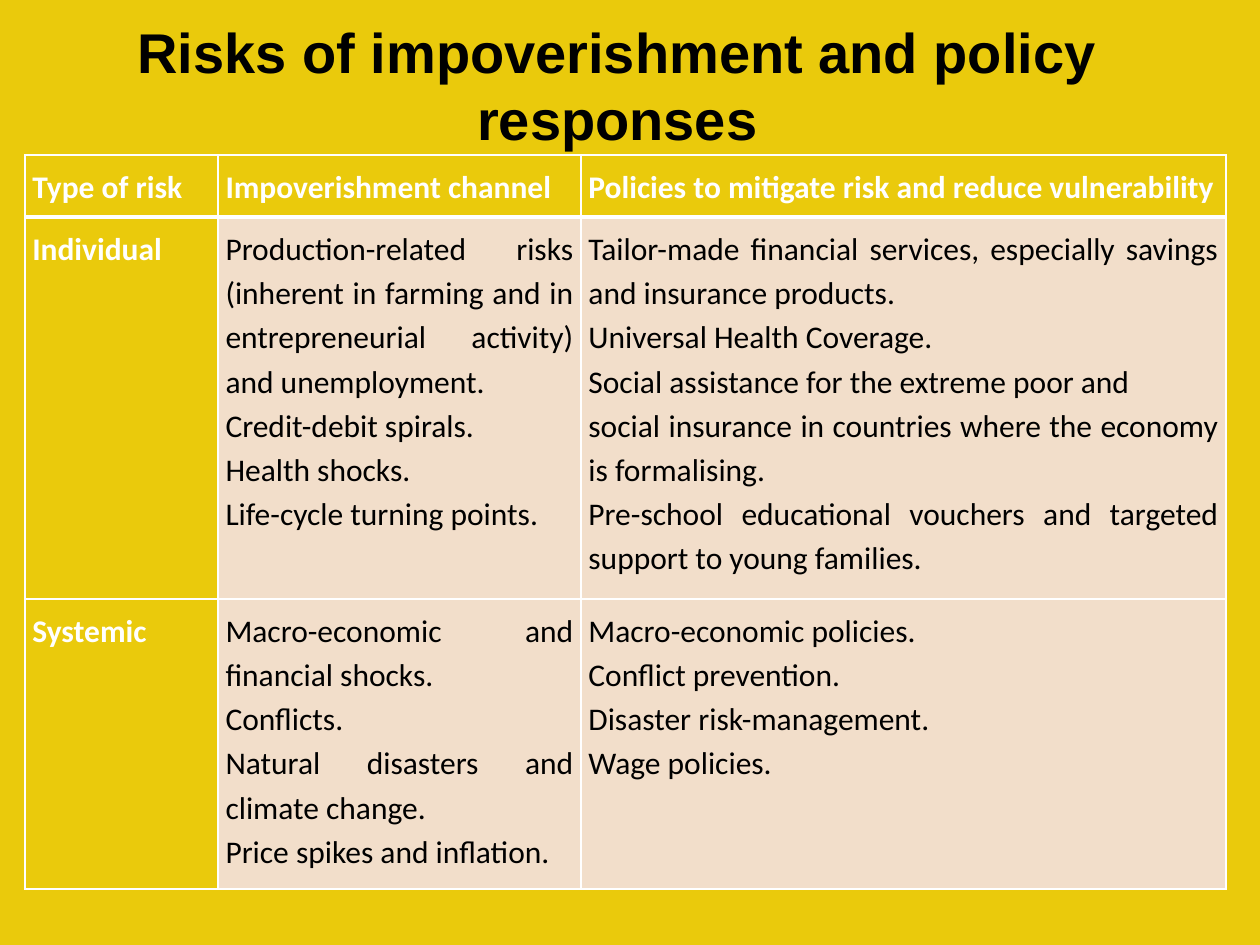
from dataclasses import dataclass

from lxml.etree import SubElement
from pptx import Presentation
from pptx.dml.color import RGBColor as RGB
from pptx.enum.text import MSO_ANCHOR as Anchor, PP_ALIGN as Align
from pptx.oxml.ns import qn
from pptx.util import Pt


@dataclass(frozen=True)
class Theme:
    gold: RGB = RGB(0xEA, 0xCA, 0x0C)
    sand: RGB = RGB(0xF2, 0xDE, 0xCA)
    white: RGB = RGB(0xFF, 0xFF, 0xFF)
    black: RGB = RGB(0, 0, 0)
    title_font: str = "Arial"
    table_font: str = "Calibri"
    title_size: int = 32
    table_size: int = 18


THEME = Theme()
TITLE = "Risks of impoverishment and policy responses"
COLUMN_WIDTHS = [110.4, 207.4, 368.6]
ROW_HEIGHTS = [35.5, 218.2, 165.6]
RISKS = [
    [["Type of risk"], ["Impoverishment channel"],
     ["Policies to mitigate risk and reduce vulnerability"]],
    [["Individual"],
     ["Production-related risks (inherent in farming and in entrepreneurial "
      "activity) and unemployment.",
      "Credit-debit spirals.", "Health shocks.", "Life-cycle turning points."],
     ["Tailor-made financial services, especially savings and insurance products.",
      "Universal Health Coverage.",
      "Social assistance for the extreme poor and",
      "social insurance in countries where the economy is formalising.",
      "Pre-school educational vouchers and targeted support to young families."]],
    [["Systemic"],
     ["Macro-economic and financial shocks.", "Conflicts.",
      "Natural disasters and climate change.", "Price spikes and inflation."],
     ["Macro-economic policies.", "Conflict prevention.",
      "Disaster risk-management.", "Wage policies."]],
]


def set_all(target, values):
    for name, value in values.items():
        setattr(target, name, value)


def write_lines(frame, lines, para_format, font_format, color):
    for index, line in enumerate(lines):
        para = frame.paragraphs[0] if index == 0 else frame.add_paragraph()
        set_all(para, para_format)
        span = para.add_run()
        span.text = line
        set_all(span.font, font_format)
        span.font.color.rgb = color


def set_borders(cell, widths):
    """Draw white borders; widths maps L, R, T and B to points."""
    props = cell._tc.get_or_add_tcPr()
    for index, (side, width) in enumerate(widths.items()):
        line = SubElement(props, qn(f"a:ln{side}"), w=str(Pt(width)))
        fill = SubElement(line, qn("a:solidFill"))
        SubElement(fill, qn("a:srgbClr"), val=str(THEME.white))
        props.insert(index, line)  # borders come before the cell fill


def add_title(page):
    box = page.shapes.add_textbox(Pt(0), Pt(21.6), Pt(705.6), Pt(90))
    frame = box.text_frame
    # The deep bottom margin lifts the heading clear of the table
    set_all(frame, {"word_wrap": True, "vertical_anchor": Anchor.MIDDLE,
                    "margin_bottom": Pt(40)})
    write_lines(frame, [TITLE], {"alignment": Align.CENTER},
                {"name": THEME.title_font, "size": Pt(THEME.title_size), "bold": True},
                THEME.black)


def fill_cell(cell, lines, is_header, is_label):
    cell.fill.solid()
    cell.fill.fore_color.rgb = THEME.gold if is_label else THEME.sand
    set_all(cell, {f"margin_{side}": Pt(4.3)
                   for side in ("left", "right", "top", "bottom")})
    write_lines(cell.text_frame, lines,
                {"alignment": Align.JUSTIFY, "line_spacing": 1.15},
                {"name": THEME.table_font, "size": Pt(THEME.table_size),
                 "bold": is_label},
                THEME.white if is_label else THEME.black)


def add_risk_table(page):
    table = page.shapes.add_table(
        len(RISKS), len(COLUMN_WIDTHS), Pt(14.2), Pt(88.6),
        Pt(sum(COLUMN_WIDTHS)), Pt(sum(ROW_HEIGHTS))).table
    for column, width in zip(table.columns, COLUMN_WIDTHS):
        column.width = Pt(width)
    for r, (row, height) in enumerate(zip(RISKS, ROW_HEIGHTS)):
        table.rows[r].height = Pt(height)
        for c, lines in enumerate(row):
            cell = table.cell(r, c)
            fill_cell(cell, lines, r == 0, r == 0 or c == 0)
            set_borders(cell, {"L": 1, "R": 1, "T": 3 if r == 1 else 1,
                               "B": 3 if r == 0 else 1})


def main():
    deck = Presentation()
    set_all(deck, {"slide_width": Pt(720), "slide_height": Pt(540)})
    page = deck.slides.add_slide(deck.slide_layouts[6])
    page.background.fill.solid()
    page.background.fill.fore_color.rgb = THEME.gold
    add_risk_table(page)
    add_title(page)
    deck.save("out.pptx")


if __name__ == "__main__":
    main()
